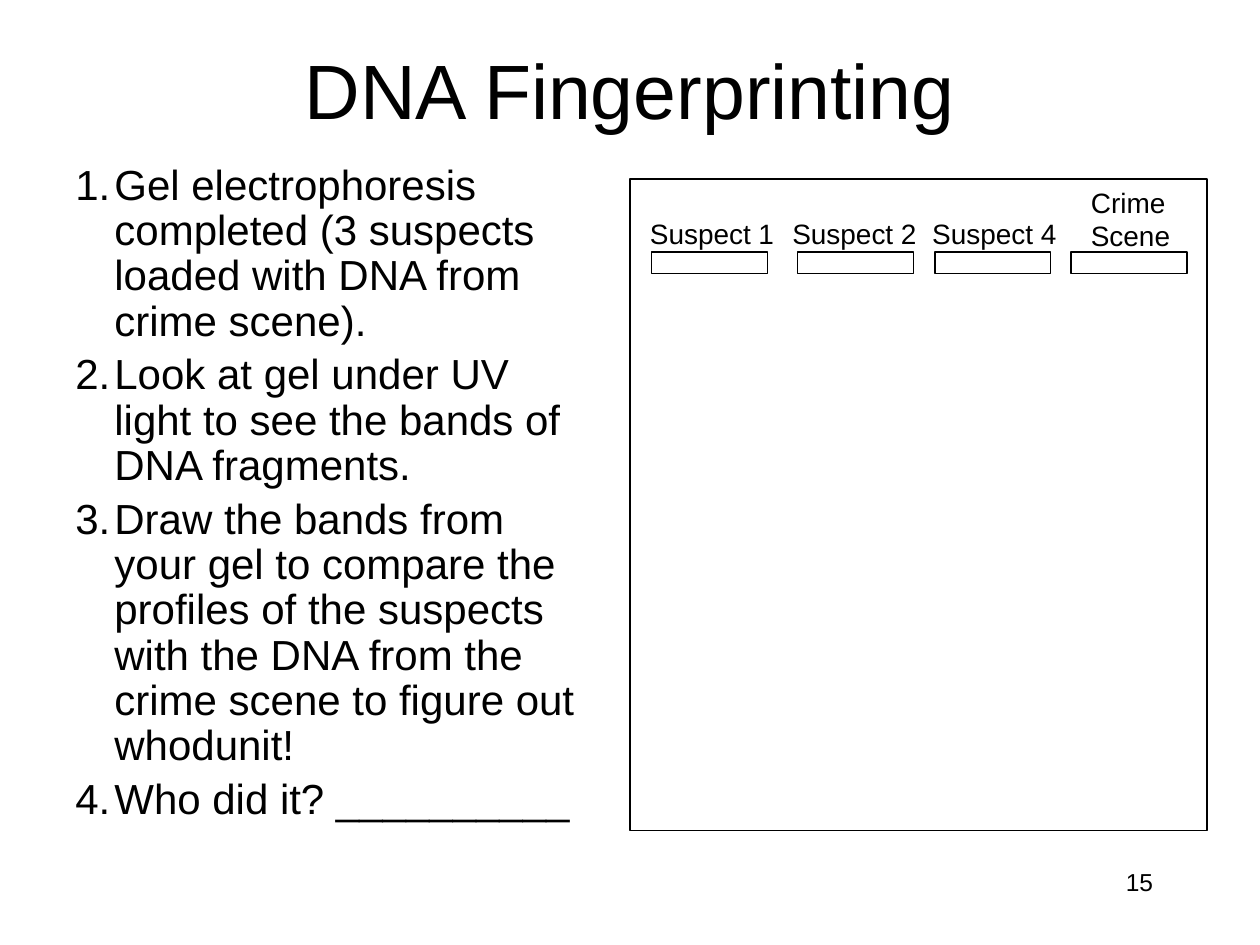
from lxml import etree
from pptx import Presentation
from pptx.dml.color import RGBColor
from pptx.enum.shapes import MSO_SHAPE
from pptx.enum.text import MSO_ANCHOR, MSO_AUTO_SIZE, PP_ALIGN
from pptx.oxml.ns import qn
from pptx.util import Inches, Pt

BLACK = RGBColor(0, 0, 0)
STEPS = [
    "Gel electrophoresis completed (3 suspects loaded with DNA from crime scene).",
    "Look at gel under UV light to see the bands of DNA fragments.",
    "Draw the bands from your gel to compare the profiles of the suspects "
    "with the DNA from the crime scene to figure out whodunit!",
    "Who did it? __________",
]
WELL_LEFTS = [5.17, 6.33, 7.42, 8.5]
LANE_LABELS = [
    (["Suspect 1"], 5.06, 1.67, 1.19, 0.37),
    (["Suspect 2"], 6.19, 1.67, 1.19, 0.37),
    (["Suspect 4"], 7.3, 1.67, 1.19, 0.37),
    (["Crime", "Scene"], 8.56, 1.42, 0.86, 0.64),
]

deck = Presentation()
deck.slide_width, deck.slide_height = Inches(10), Inches(7.5)
page = deck.slides.add_slide(deck.slide_layouts[5])


def fill_text(box, lines, size, align=PP_ALIGN.LEFT):
    frame = box.text_frame
    frame.text = "\n".join(lines)
    for para in frame.paragraphs:
        para.alignment = align
        para.font.name = "Arial"
        para.font.size = Pt(size)
        para.font.color.rgb = BLACK
    return frame


def add_outline(left, top, width, height):
    outline = page.shapes.add_shape(
        MSO_SHAPE.RECTANGLE, Inches(left), Inches(top), Inches(width), Inches(height))
    outline.shadow.inherit = False
    outline.fill.background()
    outline.line.color.rgb = BLACK
    outline.line.width = Pt(0.75)


title = page.shapes.title
title.left, title.top = Inches(0.75), Inches(0.08)
title.width, title.height = Inches(8.5), Inches(1.25)
fill_text(title, ["DNA Fingerprinting"], 44, PP_ALIGN.CENTER).vertical_anchor = MSO_ANCHOR.MIDDLE

number_box = page.shapes.add_textbox(Inches(7.17), Inches(6.83), Inches(2.08), Inches(0.5))
fill_text(number_box, ["15"], 14, PP_ALIGN.RIGHT).word_wrap = True

steps_box = page.shapes.add_textbox(Inches(0.5), Inches(1.25), Inches(4.17), Inches(5.58))
steps_frame = fill_text(steps_box, STEPS, 24)
steps_frame.word_wrap = True
for para in steps_frame.paragraphs:
    para.line_spacing = 0.9
    para.space_before = Pt(4.8)
    properties = para._p.get_or_add_pPr()
    properties.set("marL", str(Inches(0.31)))
    properties.set("indent", str(Inches(-0.31)))
    numbering = etree.Element(qn("a:buAutoNum"), type="arabicPeriod")
    properties.find(qn("a:spcBef")).addnext(numbering)

add_outline(5, 1.42, 4.58, 5.17)
for left in WELL_LEFTS:
    add_outline(left, 2, 0.92, 0.17)

for lines, *place in LANE_LABELS:
    label = page.shapes.add_textbox(*map(Inches, place))
    label_frame = fill_text(label, lines, 16)
    label_frame.word_wrap = False
    label_frame.auto_size = MSO_AUTO_SIZE.SHAPE_TO_FIT_TEXT

deck.save("out.pptx")
